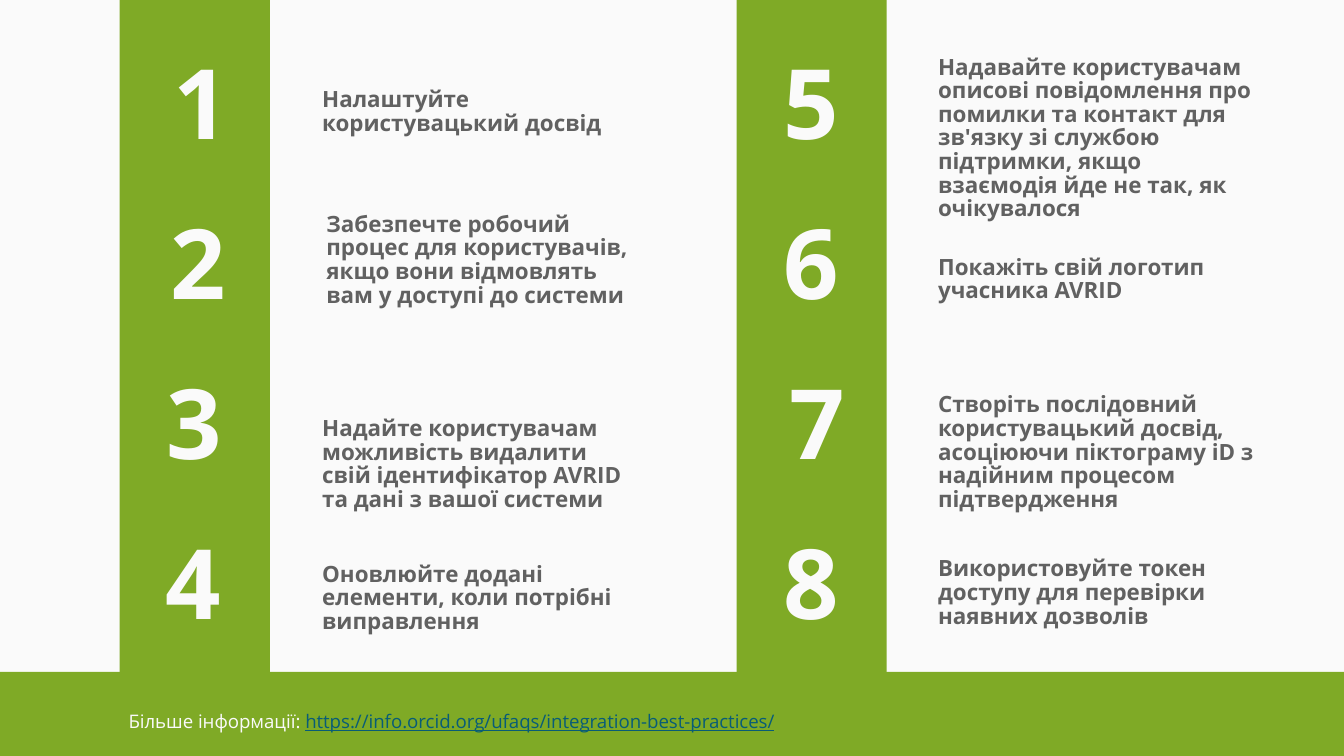
from dataclasses import dataclass

import pptx
import pptx.dml.color
import pptx.enum.shapes
import pptx.enum.text
import pptx.util

Cm = pptx.util.Cm
Pt = pptx.util.Pt
Anchor = pptx.enum.text.MSO_ANCHOR
Align = pptx.enum.text.PP_ALIGN


@dataclass(frozen=True)
class Theme:
    font: str = "Open Sans"
    light: str = "FAFAFA"
    green: str = "7FAA26"
    gray: str = "616161"
    link: str = "085C77"
    number_size: int = 52
    body_size: int = 12
    footer_size: int = 10


THEME = Theme()
SLIDE_WIDTH, SLIDE_HEIGHT = 25.4, 14.29
BAND_TOP = 12.7
COLUMN_WIDTH = 2.84
COLUMN_LEFTS = (2.26, 13.92)
NUMBER_TOP, NUMBER_STEP, NUMBER_HEIGHT = 0.91, 3.02, 2.31

NUMBERS = [
    ("1", 3.18, 0.84), ("2", 3.12, 1.17), ("3", 3.05, 1.22), ("4", 2.92, 1.35),
    ("5", 14.66, 1.3), ("6", 14.66, 1.3), ("7", 14.83, 1.12), ("8", 14.66, 1.3),
]

PRACTICES = [
    ("Налаштуйте користувацький досвід", 5.99, 1.5, 6.3, 1.12),
    ("Забезпечте робочий процес для користувачів, якщо вони відмовлять "
     "вам у доступі до системи", 6.07, 3.71, 6.1, 2.16),
    ("Надайте користувачам можливість видалити свій ідентифікатор AVRID "
     "та дані з вашої системи", 5.99, 7.06, 5.89, 2.67),
    ("Оновлюйте додані елементи, коли потрібні виправлення",
     5.99, 10.41, 5.89, 1.63),
    ("Надавайте користувачам описові повідомлення про помилки та контакт "
     "для зв'язку зі службою підтримки, якщо взаємодія йде не так, "
     "як очікувалося", 17.63, 0.56, 6.3, 3.68),
    ("Покажіть свій логотип учасника AVRID", 17.63, 4.67, 6.3, 1.12),
    ("Створіть послідовний користувацький досвід, асоціюючи піктограму iD "
     "з надійним процесом підтвердження", 17.63, 7.06, 6.3, 2.67),
    ("Використовуйте токен доступу для перевірки наявних дозволів",
     17.63, 10.31, 6.1, 1.63),
]


def color(value):
    return pptx.dml.color.RGBColor.from_string(value)


def style_run(run, size, fill, bold=False, underline=False):
    run.font.name = THEME.font
    run.font.size = Pt(size)
    run.font.bold = bold
    run.font.underline = underline
    run.font.color.rgb = color(fill)


def add_panel(slide, left, top, width, height):
    shape = slide.shapes.add_shape(
        pptx.enum.shapes.MSO_SHAPE.RECTANGLE,
        Cm(left), Cm(top), Cm(width), Cm(height))
    shape.shadow.inherit = False
    shape.fill.solid()
    shape.fill.fore_color.rgb = color(THEME.green)
    shape.line.fill.background()


def add_text_box(slide, left, top, width, height, anchor, margins):
    shape = slide.shapes.add_textbox(Cm(left), Cm(top), Cm(width), Cm(height))
    text_frame = shape.text_frame
    text_frame.word_wrap = True
    text_frame.auto_size = pptx.enum.text.MSO_AUTO_SIZE.SHAPE_TO_FIT_TEXT
    text_frame.vertical_anchor = anchor
    horizontal, vertical = margins
    text_frame.margin_left = text_frame.margin_right = Cm(horizontal)
    text_frame.margin_top = text_frame.margin_bottom = Cm(vertical)
    return text_frame


def add_label(slide, text, box, anchor, alignment, size, fill):
    text_frame = add_text_box(slide, *box, anchor, (0.1, 0.05))
    text_frame.text = text
    paragraph = text_frame.paragraphs[0]
    paragraph.alignment = alignment
    paragraph.line_spacing = 0.885
    style_run(paragraph.runs[0], size, fill, bold=True)


def add_footer(slide):
    text_frame = add_text_box(
        slide, 2.18, 12.93, 15.44, 1.12, Anchor.BOTTOM, (0.25, 0.25))
    paragraph = text_frame.paragraphs[0]
    parts = [
        ("Більше інформації: ", THEME.light, False),
        ("https://info.orcid.org/ufaqs/integration-best-practices/",
         THEME.link, True),
    ]
    for text, fill, underline in parts:
        run = paragraph.add_run()
        run.text = text
        style_run(run, THEME.footer_size, fill, underline=underline)


def main():
    presentation = pptx.Presentation()
    presentation.slide_width = Cm(SLIDE_WIDTH)
    presentation.slide_height = Cm(SLIDE_HEIGHT)
    slide = presentation.slides.add_slide(presentation.slide_layouts[6])
    slide.background.fill.solid()
    slide.background.fill.fore_color.rgb = color(THEME.light)

    add_panel(slide, 0, BAND_TOP, SLIDE_WIDTH, SLIDE_HEIGHT - BAND_TOP)
    for left in COLUMN_LEFTS:
        add_panel(slide, left, 0, COLUMN_WIDTH, BAND_TOP)

    for index, (number, left, width) in enumerate(NUMBERS):
        top = NUMBER_TOP + index % 4 * NUMBER_STEP
        add_label(slide, number, (left, top, width, NUMBER_HEIGHT),
                  Anchor.MIDDLE, Align.RIGHT, THEME.number_size, THEME.light)
    for text, *box in PRACTICES:
        add_label(slide, text, box, Anchor.BOTTOM, Align.LEFT,
                  THEME.body_size, THEME.gray)

    add_footer(slide)
    presentation.save("out.pptx")


if __name__ == "__main__":
    main()
